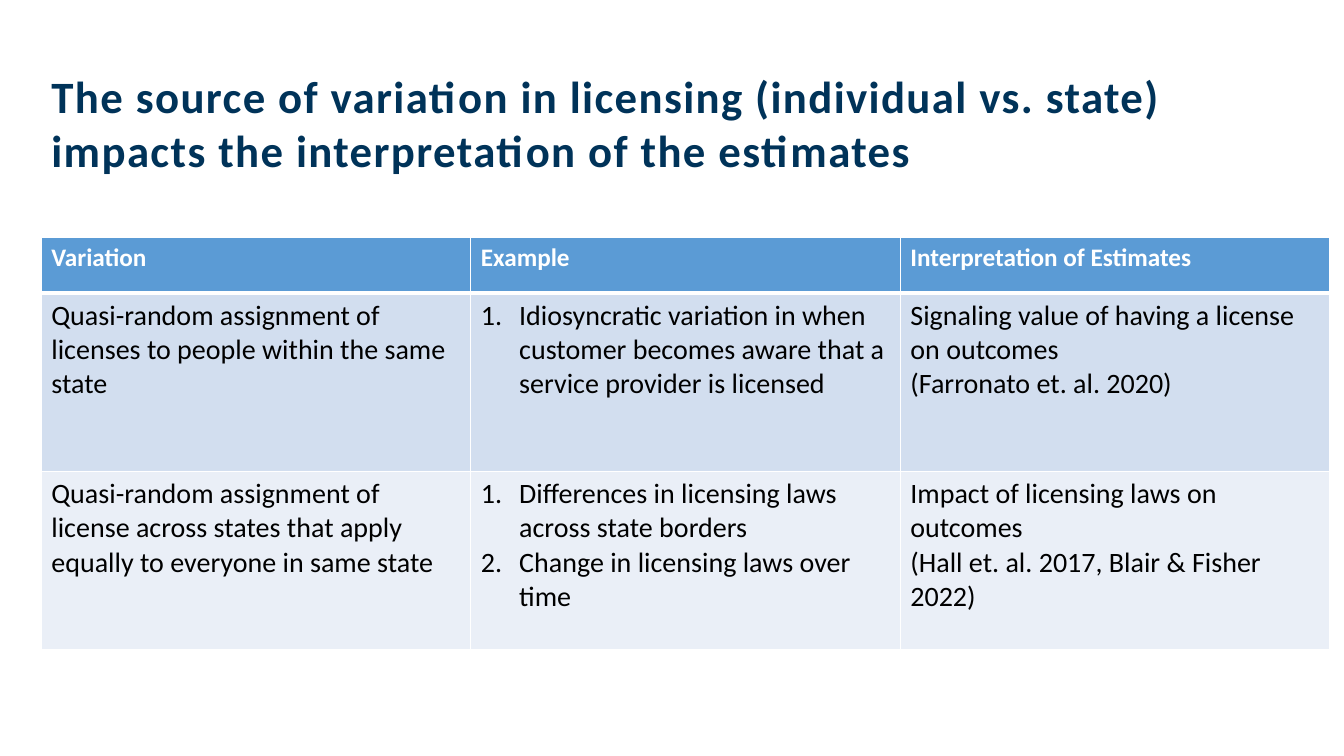
from lxml import etree
from pptx import Presentation
from pptx.dml.color import RGBColor
from pptx.enum import text
from pptx.oxml import ns
from pptx.util import Inches, Pt

COLORS = {"navy": "003359", "header": "5B9BD5", "band": "D2DEEF",
          "light": "EAEFF7", "white": "FFFFFF", "black": "000000"}
FORMATS = {
    "title": {"name": "Calibri", "size": Pt(32), "bold": True},
    "header": {"name": "Calibri", "size": Pt(18), "bold": True},
    "body": {"name": "Calibri", "size": Pt(20), "bold": False},
}
TITLE = ("The source of variation in licensing (individual vs. state) "
         "impacts the interpretation of the estimates")
ROWS = [
    [["Variation"], ["Example"], ["Interpretation of Estimates"]],
    [["Quasi-random assignment of licenses to people within the same state"],
     ["Idiosyncratic variation in when customer becomes aware that a service provider is licensed"],
     ["Signaling value of having a license on outcomes", "(Farronato et. al. 2020)"]],
    [["Quasi-random assignment of license across states that apply equally to everyone in same state"],
     ["Differences in licensing laws across state borders", "Change in licensing laws over time"],
     ["Impact of licensing laws on outcomes", "(Hall et. al. 2017, Blair & Fisher 2022)"]],
]
ROW_HEIGHTS = [0.55, 1.77, 1.77]
ROW_FILLS = ["header", "band", "light"]
EXAMPLE_COLUMN = 1


def rgb(name):
    """Return the named colour."""
    return RGBColor.from_string(COLORS[name])


def add_run(paragraph, words, style, color):
    """Add a run of words in the given style and colour."""
    run = paragraph.add_run()
    run.text = words
    for attribute, value in FORMATS[style].items():
        setattr(run.font, attribute, value)
    run.font.color.rgb = rgb(color)
    return run


def number_paragraph(paragraph):
    """Give a paragraph a hanging automatic number."""
    properties = paragraph._p.get_or_add_pPr()
    indent = Inches(0.38)
    properties.set("marL", str(indent))
    properties.set("indent", str(-indent))
    etree.SubElement(properties, ns.qn("a:buFont"), typeface="+mj-lt")
    etree.SubElement(properties, ns.qn("a:buAutoNum"), type="arabicPeriod")


def add_borders(cell, widths):
    """Draw white borders with the given point width for each side."""
    properties = cell._tc.get_or_add_tcPr()
    for side, width in widths.items():
        line = etree.SubElement(properties, ns.qn(f"a:ln{side}"), w=str(Pt(width)))
        fill = etree.SubElement(line, ns.qn("a:solidFill"))
        etree.SubElement(fill, ns.qn("a:srgbClr"), val=COLORS["white"])


def place_title(slide, left, top, width, height):
    """Place and format the slide title in the given box."""
    title = slide.shapes.title
    box = {"left": left, "top": top, "width": width, "height": height}
    for attribute, value in box.items():
        setattr(title, attribute, Inches(value))
    frame = title.text_frame
    frame.word_wrap = True
    frame.auto_size = text.MSO_AUTO_SIZE.NONE
    frame.vertical_anchor = text.MSO_ANCHOR.TOP
    paragraph = frame.paragraphs[0]
    paragraph.alignment = text.PP_ALIGN.LEFT
    run = add_run(paragraph, TITLE, "title", "navy")
    run.font._element.set("spc", "100")


def fill_cell(cell, lines, row, numbered):
    """Write the lines of a cell and set its fill and borders."""
    is_header = row == 0
    add_borders(cell, {"L": 1, "R": 1, "T": 3 if row == 1 else 1,
                       "B": 3 if is_header else 1})
    cell.fill.solid()
    cell.fill.fore_color.rgb = rgb(ROW_FILLS[row])
    frame = cell.text_frame
    for index, words in enumerate(lines):
        paragraph = frame.add_paragraph() if index else frame.paragraphs[0]
        if numbered:
            number_paragraph(paragraph)
        add_run(paragraph, words, "header" if is_header else "body",
                "white" if is_header else "black")


def add_estimates_table(slide, left, top, width):
    """Add the table of variation sources with equal columns."""
    columns = len(ROWS[0])
    frame = slide.shapes.add_table(len(ROWS), columns, Inches(left), Inches(top),
                                   Inches(width), Inches(sum(ROW_HEIGHTS)))
    table = frame.table
    for column in table.columns:
        column.width = Inches(width / columns)
    for row, cells in enumerate(ROWS):
        table.rows[row].height = Inches(ROW_HEIGHTS[row])
        for column, lines in enumerate(cells):
            numbered = row > 0 and column == EXAMPLE_COLUMN
            fill_cell(table.cell(row, column), lines, row, numbered)


def main():
    """Build and save the slide."""
    presentation = Presentation()
    presentation.slide_width = Inches(13.33)
    presentation.slide_height = Inches(7.5)
    slide = presentation.slides.add_slide(presentation.slide_layouts[5])
    place_title(slide, 0.41, 0.63, 12.48, 1.18)
    add_estimates_table(slide, 0.41, 2.36, 12.78)
    presentation.save("out.pptx")


if __name__ == "__main__":
    main()
